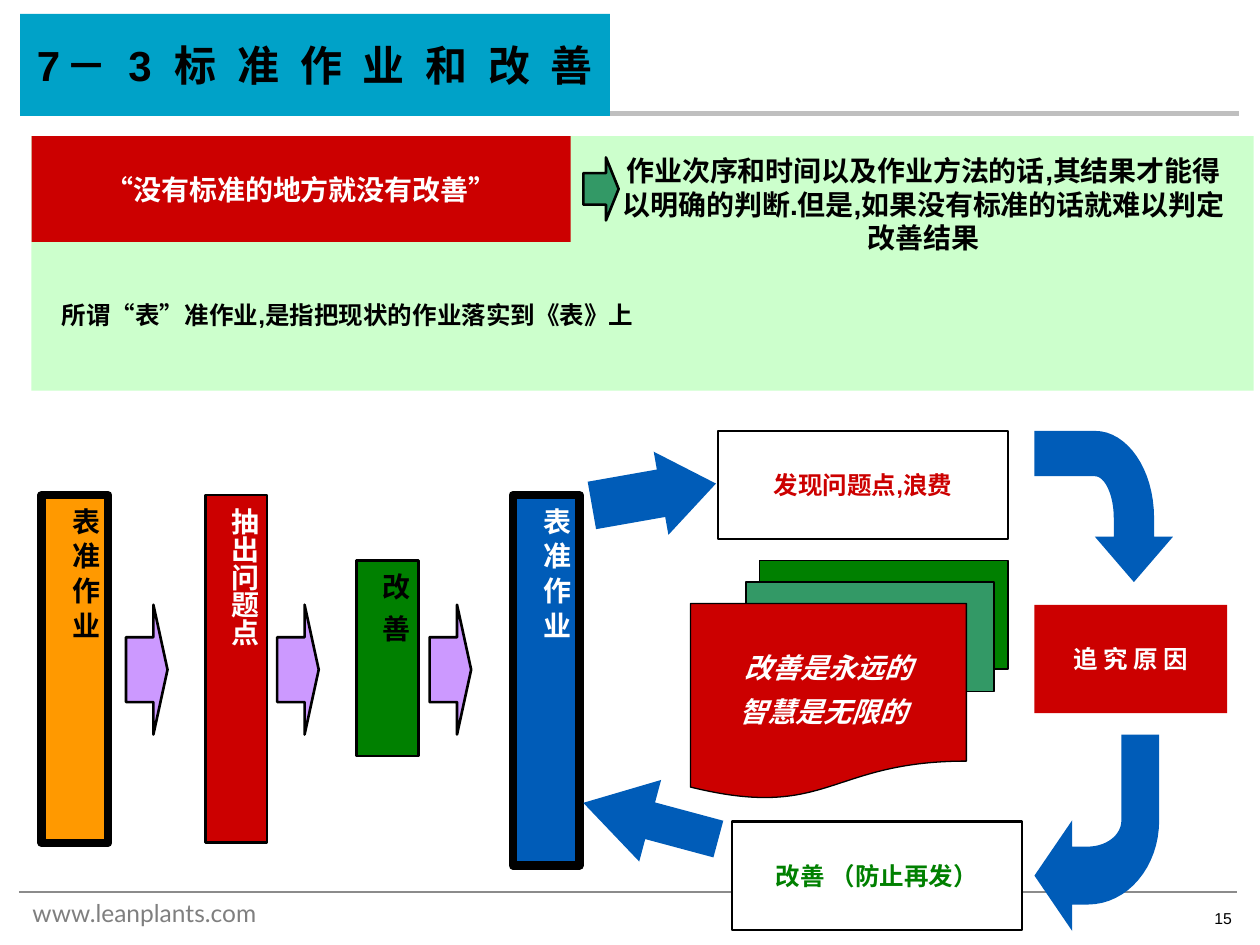
"""Build the slide on standard work and improvement."""
from dataclasses import dataclass

from lxml.etree import SubElement
from pptx import Presentation
from pptx.dml.color import RGBColor
from pptx.enum.shapes import MSO_CONNECTOR, MSO_SHAPE
from pptx.enum.text import MSO_ANCHOR, MSO_AUTO_SIZE, PP_ALIGN
from pptx.oxml.ns import qn
from pptx.util import Inches, Pt

RECT, ARROW, PAPER = MSO_SHAPE.RECTANGLE, MSO_SHAPE.RIGHT_ARROW, MSO_SHAPE.FLOWCHART_DOCUMENT
LEFT, CENTER = PP_ALIGN.LEFT, PP_ALIGN.CENTER
TOP, MIDDLE = MSO_ANCHOR.TOP, MSO_ANCHOR.MIDDLE
STRAIGHT = MSO_CONNECTOR.STRAIGHT
FIXED = MSO_AUTO_SIZE.NONE

COLORS = {
    "black": "000000", "white": "FFFFFF", "cyan": "00A2C8", "mint": "CCFFCC",
    "red": "CC0000", "teal": "339966", "orange": "FF9900", "green": "008000",
    "blue": "005CB8", "lilac": "CC99FF", "rule": "8B8B8B", "pale": "BFBFBF",
    "gray": "7F7F7F",
}


@dataclass
class Panel:
    box: tuple
    fill: str
    text: str = ""
    ink: str = "black"
    size: float = 14
    line: float = 0


@dataclass
class Pillar:
    box: tuple
    fill: str
    text: str
    ink: str
    line: float
    gap: int = 0


@dataclass
class Arrow:
    box: tuple
    fill: str
    bend: tuple
    turn: float = 0
    line: float = 0


@dataclass
class Curve:
    start: tuple
    legs: list


def color(name: str) -> RGBColor:
    return RGBColor.from_string(COLORS[name])


def write(frame, text: str, size: float = 14, ink: str = "black", font: str = "Arial",
          bold: bool = True, slant: bool = False, align=CENTER, anchor=TOP,
          wrap: bool = True, gap: int = 0) -> None:
    frame.auto_size = FIXED
    frame.word_wrap = wrap
    frame.vertical_anchor = anchor
    line = frame.paragraphs[0]
    line.alignment = align
    run = line.add_run()
    run.text = text
    face = run.font
    face.name, face.size, face.bold, face.italic = font, Pt(size), bold, slant
    face.color.rgb = color(ink)
    if gap:
        run._r.get_or_add_rPr().set("spc", str(gap))


def paint(shape, fill: str, width: float = 0) -> None:
    shape.shadow.inherit = False
    shape.fill.solid()
    shape.fill.fore_color.rgb = color(fill)
    if width:
        shape.line.color.rgb = color("black")
        shape.line.width = Pt(width)
    else:
        shape.line.fill.background()


def place(slide, kind, box: tuple, fill: str, width: float = 0):
    shape = slide.shapes.add_shape(kind, *map(Inches, box))
    paint(shape, fill, width)
    return shape


def label(slide, box: tuple, text: str, **style) -> None:
    write(slide.shapes.add_textbox(*map(Inches, box)).text_frame, text, **style)


def rule(slide, left: float, right: float, top: float, ink: str, width: float) -> None:
    line = slide.shapes.add_connector(STRAIGHT, *map(Inches, (left, top, right, top)))
    line.line.color.rgb = color(ink)
    line.line.width = Pt(width)
    SubElement(line._element.spPr, qn("a:effectLst"))


def panel(slide, item: Panel) -> None:
    shape = place(slide, RECT, item.box, item.fill, item.line)
    if item.text:
        write(shape.text_frame, item.text, size=item.size, ink=item.ink,
              anchor=MIDDLE, wrap=False)


def pillar(slide, item: Pillar) -> None:
    frame = place(slide, RECT, item.box, item.fill, item.line).text_frame
    write(frame, item.text, size=16, ink=item.ink, align=LEFT, gap=item.gap)
    frame._txBody.bodyPr.set("vert", "eaVert")


def arrow(slide, item: Arrow) -> None:
    shape = place(slide, ARROW, item.box, item.fill, item.line)
    shape.adjustments[0], shape.adjustments[1] = item.bend
    shape.rotation = item.turn


def bezier(ends: list, steps: int = 16) -> list:
    points = []
    for step in range(1, steps + 1):
        t = step / steps
        shares = ((1 - t) ** 3, 3 * t * (1 - t) ** 2, 3 * t * t * (1 - t), t ** 3)
        points.append(tuple(sum(w * p[axis] for w, p in zip(shares, ends)) for axis in (0, 1)))
    return points


def curve(slide, item: Curve) -> None:
    points = [item.start]
    for leg in item.legs:
        points += bezier([points[-1], *leg]) if len(leg) == 3 else leg
    spots = [(Inches(x), Inches(y)) for x, y in points]
    pen = slide.shapes.build_freeform(*spots[0], scale=1.0)
    pen.add_line_segments(spots[1:], close=True)
    paint(pen.convert_to_shape(), "blue")


PANELS = [
    Panel((0.25, 1.08, 9.7, 2.02), "mint"),
    Panel((0.25, 1.08, 4.28, 0.84), "red", "“没有标准的地方就没有改善”", "white", 16),
    Panel((5.7, 3.42, 2.3, 0.86), "white", "发现问题点,浪费", "red", line=1.25),
    Panel((6.03, 4.45, 1.97, 0.86), "green", line=0.75),
    Panel((5.92, 4.62, 1.97, 0.87), "teal", line=0.75),
    Panel((5.81, 6.52, 2.3, 0.86), "white", "改善 （防止再发）", "green", line=1.25),
    Panel((8.21, 4.8, 1.53, 0.86), "red", "追 究 原 因", "white"),
]
PILLARS = [
    Pillar((0.33, 3.93, 0.53, 2.76), "orange", "表 准 作 业", "black", 4.75),
    Pillar((1.63, 3.93, 0.49, 2.76), "red", "抽出问题点", "white", 1.5),
    Pillar((2.83, 4.45, 0.49, 1.55), "green", "改 善", "black", 1.5, 200),
    Pillar((4.07, 3.93, 0.53, 2.94), "blue", "表 准 作 业", "white", 4.75),
]
ARROWS = [
    Arrow((4.63, 1.25, 0.28, 0.5), "teal", (0.5, 0.36), line=1.5),
    *(Arrow((left, 4.8, 0.33, 1.03), "lilac", (0.5, 0.34), line=1.5) for left in (1, 2.2, 3.41)),
    Arrow((4.69, 3.59, 1, 0.67), "blue", (0.57, 0.66), 350),
    Arrow((4.61, 6.18, 1.11, 0.67), "blue", (0.45, 0.82), 195),
]
CURVES = [
    Curve((9, 4.62), [
        [(9.31, 4.26), (9.16, 4.26)], [(9.16, 4.11)],
        [(9.16, 3.73), (8.95, 3.42), (8.69, 3.42)],
        [(8.21, 3.42), (8.21, 3.78)], [(8.69, 3.78)],
        [(8.77, 3.78), (8.84, 3.93), (8.84, 4.11)],
        [(8.84, 4.26), (8.69, 4.26)]]),
    Curve((8.21, 6.95), [
        [(8.51, 7.39), (8.51, 7.18)], [(8.63, 7.18)],
        [(8.95, 7.18), (9.2, 6.88), (9.2, 6.51)],
        [(9.2, 5.83), (8.9, 5.83)], [(8.9, 6.51)],
        [(8.9, 6.63), (8.78, 6.72), (8.63, 6.72)],
        [(8.51, 6.72), (8.51, 6.51)]]),
]


def main() -> None:
    deck = Presentation()
    deck.slide_width, deck.slide_height = Inches(10), Inches(7.5)
    slide = deck.slides.add_slide(deck.slide_layouts[5])
    title = slide.shapes.title
    title.left, title.top, title.width, title.height = map(Inches, (0.16, 0.11, 4.68, 0.81))
    paint(title, "cyan")
    write(title.text_frame, "7－ 3 标 准 作 业 和 改 善", size=24, anchor=MIDDLE,
          wrap=False, gap=320)
    rule(slide, 0.15, 9.82, 7.08, "rule", 1)
    rule(slide, 4.84, 9.83, 0.9, "pale", 3)
    label(slide, (0.16, 7.08, 2.34, 0.34), "www.leanplants.com", ink="gray",
          font="Lato", bold=False, align=LEFT)
    label(slide, (9.54, 7.16, 0.37, 0.27), "15", size=9, bold=False, align=LEFT, wrap=False)
    for items, draw in ((PANELS, panel), (PILLARS, pillar), (ARROWS, arrow), (CURVES, curve)):
        for item in items:
            draw(slide, item)
    label(slide, (4.81, 1.17, 5.04, 0.9),
          "作业次序和时间以及作业方法的话,其结果才能得以明确的判断.但是,如果没有标准的话就难以判定改善结果",
          size=16)
    label(slide, (0, 2.33, 5.52, 0.33), "所谓“表”准作业,是指把现状的作业落实到《表》上")
    motto = {"size": 16, "ink": "white", "slant": True}
    paper = place(slide, PAPER, (5.48, 4.79, 2.19, 1.56), "red", 0.75).text_frame
    paper.margin_bottom = Inches(0.28)
    write(paper, "改善是永远的", anchor=MIDDLE, wrap=False, **motto)
    label(slide, (5.33, 5.46, 2.41, 0.37), "智慧是无限的", **motto)
    deck.save("out.pptx")


if __name__ == "__main__":
    main()
